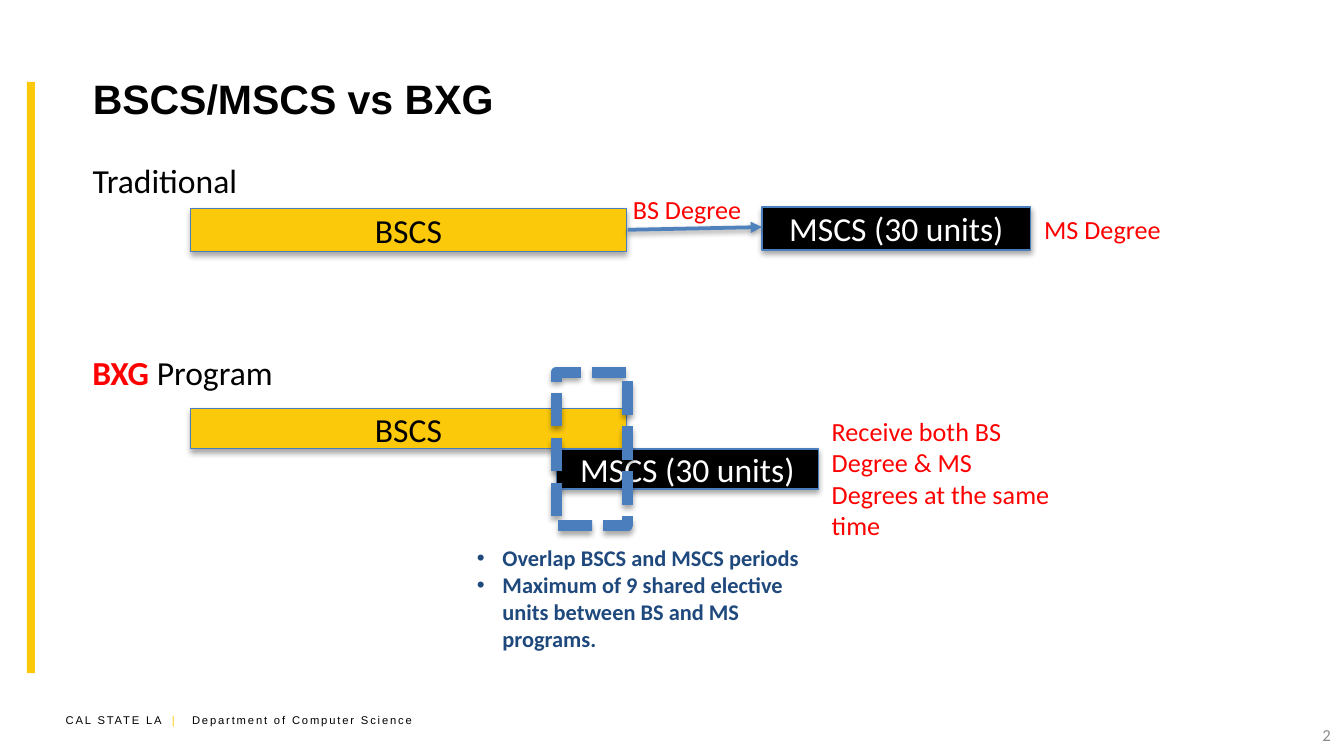
from lxml import etree
from pptx import Presentation
from pptx import util as u
from pptx.dml.color import RGBColor
from pptx.enum import dml, shapes, text
from pptx.oxml.ns import qn

PX = 9144  # EMU per px, 100 px to the inch
GOLD, BLACK, WHITE, RED = "FCC90A", "000000", "FFFFFF", "FF0000"
NAVY, GRAY, OUTLINE, ARROW = "1F497D", "8C8C8C", "4B7EBC", "4F81BD"


def px(*lengths):
    return [u.Emu(length * PX) for length in lengths]


def color(code):
    return RGBColor.from_string(code)


def set_font(font, size, code, bold=False, name="Calibri"):
    font.size, font.bold, font.name = u.Pt(size), bold, name
    font.color.rgb = color(code)


def add_shadow(element, alpha, blur, distance):
    """Give a shape or connector a soft shadow straight below it."""
    properties = element.spPr
    effects = properties.find(qn("a:effectLst"))
    if effects is None:
        effects = etree.SubElement(properties, qn("a:effectLst"))
    outer = etree.SubElement(
        effects, qn("a:outerShdw"), blurRad=str(u.Pt(blur)),
        dist=str(u.Pt(distance)), dir="5400000", rotWithShape="0")
    black = etree.SubElement(outer, qn("a:srgbClr"), val=BLACK)
    etree.SubElement(black, qn("a:alpha"), val=str(alpha * 1000))


def add_rectangle(slide, box, fill=None, line=None, width=0.75):
    rectangle = slide.shapes.add_shape(shapes.MSO_SHAPE.RECTANGLE, *px(*box))
    rectangle.shadow.inherit = False
    if fill:
        rectangle.fill.solid()
        rectangle.fill.fore_color.rgb = color(fill)
    else:
        rectangle.fill.background()
    if line:
        rectangle.line.color.rgb = color(line)
        rectangle.line.width = u.Pt(width)
        add_shadow(rectangle._element, 35, 3.1, 1.8)
    else:
        rectangle.line.fill.background()
    return rectangle


def add_period(slide, box, label, fill, label_color):
    """Add a bar for the time spent on one degree."""
    frame = add_rectangle(slide, box, fill, OUTLINE).text_frame
    frame.vertical_anchor = text.MSO_ANCHOR.MIDDLE
    paragraph = frame.paragraphs[0]
    paragraph.text = label
    paragraph.alignment = text.PP_ALIGN.CENTER
    set_font(paragraph.font, 18, label_color)


def add_text_frame(slide, box, wrap=True):
    frame = slide.shapes.add_textbox(*px(*box)).text_frame
    frame.word_wrap = wrap
    return frame


def add_label(slide, box, label, size, code, wrap=False):
    frame = add_text_frame(slide, box, wrap)
    paragraph = frame.paragraphs[0]
    paragraph.text = label
    set_font(paragraph.font, size, code)
    return frame


def add_bullets(slide, box, items):
    frame = add_text_frame(slide, box)
    for index, item in enumerate(items):
        paragraph = frame.add_paragraph() if index else frame.paragraphs[0]
        paragraph.text = item
        properties = paragraph._p.get_or_add_pPr()
        indent = 19 * PX
        properties.set("marL", str(indent))
        properties.set("indent", str(-indent))
        etree.SubElement(properties, qn("a:buFont"), typeface="Arial")
        etree.SubElement(properties, qn("a:buChar"), char="•")
        set_font(paragraph.font, 12, NAVY, bold=True)


def add_arrow(slide, start, end):
    arrow = slide.shapes.add_connector(
        shapes.MSO_CONNECTOR.STRAIGHT, *px(*start, *end))
    arrow.line.color.rgb = color(ARROW)
    arrow.line.width = u.Pt(2)
    etree.SubElement(arrow.line._get_or_add_ln(), qn("a:tailEnd"),
                     type="triangle")
    add_shadow(arrow._element, 38, 3.1, 1.6)


def add_footer(slide):
    paragraph = add_text_frame(slide, (39, 526, 292, 20)).paragraphs[0]
    tabs = etree.SubElement(paragraph._p.get_or_add_pPr(), qn("a:tabLst"))
    for stop in (79, 94):
        etree.SubElement(tabs, qn("a:tab"), pos=str(stop * PX), algn="l")
    for words, code in (("CAL STATE LA\t", BLACK), ("|\t", GOLD),
                        ("Department of Computer Science", BLACK)):
        run = paragraph.add_run()
        run.text = words
        set_font(run.font, 6, code, name="Arial")
        run._r.get_or_add_rPr().set("spc", "100")


def add_title(slide, box, words):
    title = slide.shapes.title
    title.left, title.top, title.width, title.height = px(*box)
    frame = title.text_frame
    frame.auto_size = text.MSO_AUTO_SIZE.NONE
    frame.vertical_anchor = text.MSO_ANCHOR.MIDDLE
    paragraph = frame.paragraphs[0]
    paragraph.text = words
    paragraph.alignment = text.PP_ALIGN.LEFT
    set_font(paragraph.font, 22, BLACK, bold=True, name="Arial")


def main():
    deck = Presentation()
    deck.slide_width = u.Inches(10)
    deck.slide_height = deck.slide_width * 9 // 16
    slide = deck.slides.add_slide(deck.slide_layouts[5])

    # Frame of the page
    add_footer(slide)
    add_rectangle(slide, (20, 61, 6, 440), GOLD)
    add_title(slide, (59, 26, 890, 94), "BSCS/MSCS vs BXG")
    number = add_label(slide, (767, 532, 233, 30), "2", 9, GRAY, wrap=True)
    number.vertical_anchor = text.MSO_ANCHOR.MIDDLE
    number.paragraphs[0].alignment = text.PP_ALIGN.RIGHT

    # Traditional: one degree after the other
    add_label(slide, (59, 114, 129, 40), "Traditional", 18, BLACK)
    add_period(slide, (142, 155, 324, 32), "BSCS", GOLD, BLACK)
    add_period(slide, (567, 154, 200, 32), "MSCS (30 units)", BLACK, WHITE)
    add_label(slide, (461, 139, 102, 34), "BS Degree", 14, RED)
    add_label(slide, (767, 154, 108, 34), "MS Degree", 14, RED)
    add_arrow(slide, (467, 171), (567, 169))

    # BXG: overlapping degrees
    heading = add_text_frame(slide, (59, 257, 154, 40), wrap=False)
    for words, code, bold in (("BXG", RED, True), (" Program", BLACK, False)):
        run = heading.paragraphs[0].add_run()
        run.text = words
        set_font(run.font, 18, code, bold)
    add_period(slide, (142, 304, 324, 30), "BSCS", GOLD, BLACK)
    add_period(slide, (414, 334, 195, 30), "MSCS (30 units)", BLACK, WHITE)
    add_label(slide, (609, 304, 186, 104),
              "Receive both BS Degree & MS Degrees at the same time",
              14, RED, wrap=True)
    overlap = add_rectangle(slide, (414, 277, 53, 114), line=OUTLINE, width=6)
    overlap.line.dash_style = dml.MSO_LINE.SQUARE_DOT
    add_bullets(slide, (345, 400, 278, 91), (
        "Overlap BSCS and MSCS periods",
        "Maximum of 9 shared elective units between BS and MS programs."))

    deck.save("out.pptx")


if __name__ == "__main__":
    main()
